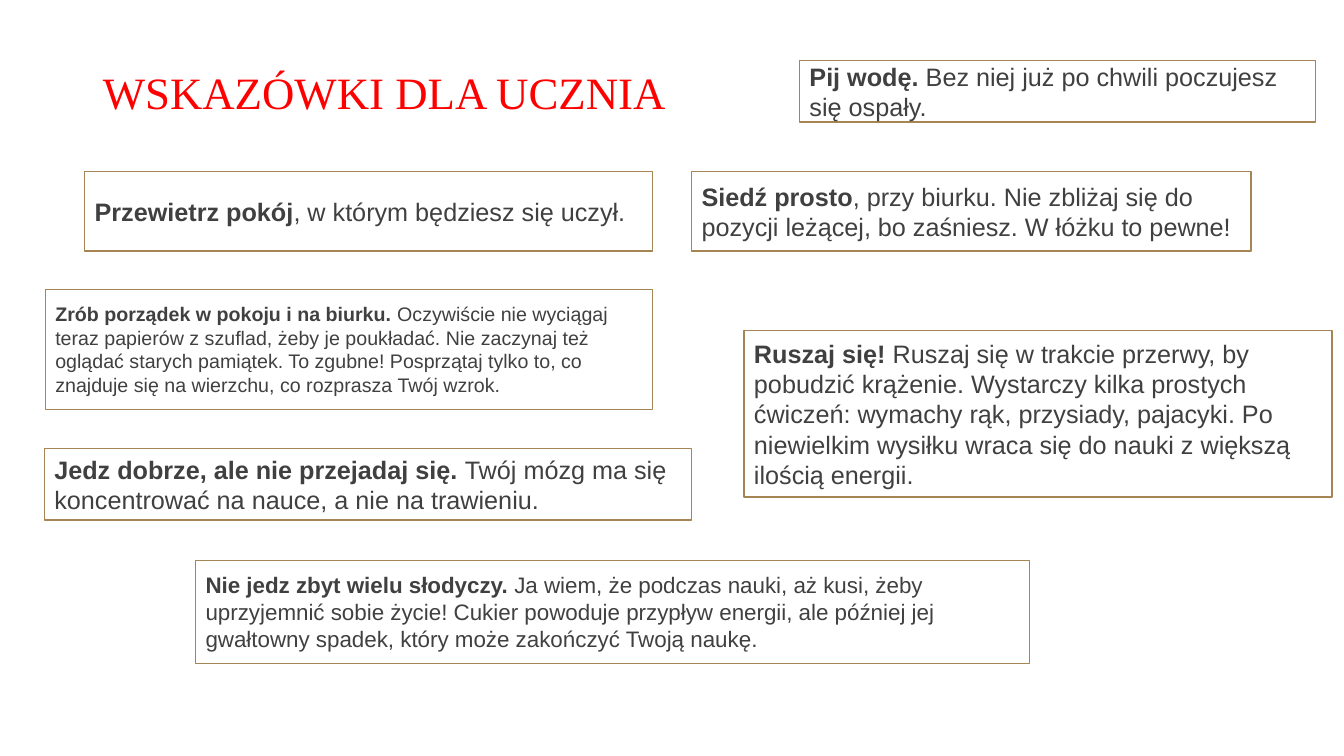
"""Builds a slide of study tips for pupils."""
from dataclasses import dataclass

import pptx
import pptx.dml.color
import pptx.enum.shapes
import pptx.enum.text
import pptx.util

Inches = pptx.util.Inches
Align = pptx.enum.text.PP_ALIGN
Anchor = pptx.enum.text.MSO_ANCHOR

HEADING = "WSKAZÓWKI DLA UCZNIA"
HEADING_PLACE = (0.92, 0.4, 10.75, 0.83)

TIPS = [
    ("Przewietrz pokój", ", w którym będziesz się uczył.",
     "large", (0.84, 1.7, 5.63, 0.79)),
    ("Zrób porządek w pokoju i na biurku. ",
     "Oczywiście nie wyciągaj teraz papierów z szuflad, żeby je poukładać. "
     "Nie zaczynaj też oglądać starych pamiątek. To zgubne! Posprzątaj tylko to, "
     "co znajduje się na wierzchu, co rozprasza Twój wzrok.",
     "small", (0.45, 2.87, 6.02, 1.19)),
    ("Jedz dobrze, ale nie przejadaj się. ",
     "Twój mózg ma się koncentrować na nauce, a nie na trawieniu.",
     "large", (0.44, 4.45, 6.42, 0.71)),
    ("Nie jedz zbyt wielu słodyczy. ",
     "Ja wiem, że podczas nauki, aż kusi, żeby uprzyjemnić sobie życie! "
     "Cukier powoduje przypływ energii, ale później jej gwałtowny spadek, "
     "który może zakończyć Twoją naukę.",
     "medium", (1.94, 5.56, 8.27, 1.02)),
    ("Pij wodę. ", "Bez niej już po chwili poczujesz się ospały.",
     "large", (7.93, 0.6, 5.12, 0.61)),
    ("Siedź prosto",
     ", przy biurku. Nie zbliżaj się do pozycji leżącej, bo zaśniesz. "
     "W łóżku to pewne!",
     "large", (6.86, 1.7, 5.55, 0.79)),
    ("Ruszaj się! ",
     "Ruszaj się w trakcie przerwy, by pobudzić krążenie. Wystarczy kilka "
     "prostych ćwiczeń: wymachy rąk, przysiady, pajacyki. Po niewielkim wysiłku "
     "wraca się do nauki z większą ilością energii.",
     "large", (7.38, 3.28, 5.83, 1.65)),
]


@dataclass(frozen=True)
class Theme:
    heading_font: str = "Times New Roman"
    body_font: str = "Arial"
    heading: str = "FF0000"
    body: str = "404040"
    border: str = "A68555"
    paper: str = "FFFFFF"
    heading_size: int = 32
    large: int = 18
    medium: int = 16
    small: int = 14


THEME = Theme()


def rgb(code):
    return pptx.dml.color.RGBColor.from_string(code)


def add_text(paragraph, text, *, size, font=THEME.body_font, color=THEME.body, bold=False):
    run = paragraph.add_run()
    run.text = text
    run.font.size = pptx.util.Pt(size)
    run.font.name = font
    run.font.bold = bold
    run.font.color.rgb = rgb(color)


def prepare_frame(frame, anchor):
    frame.word_wrap = True
    frame.auto_size = pptx.enum.text.MSO_AUTO_SIZE.NONE
    frame.vertical_anchor = anchor
    frame.paragraphs[0].alignment = Align.LEFT
    return frame.paragraphs[0]


def add_heading(slide):
    heading = slide.shapes.title
    heading.left, heading.top, heading.width, heading.height = map(Inches, HEADING_PLACE)
    paragraph = prepare_frame(heading.text_frame, Anchor.BOTTOM)
    paragraph.line_spacing = 0.9
    add_text(paragraph, HEADING, size=THEME.heading_size,
             font=THEME.heading_font, color=THEME.heading)


def add_tip(slide, advice, details, size_name, place):
    card = slide.shapes.add_shape(
        pptx.enum.shapes.MSO_SHAPE.RECTANGLE, *map(Inches, place))
    card.shadow.inherit = False
    card.fill.solid()
    card.fill.fore_color.rgb = rgb(THEME.paper)
    card.line.color.rgb = rgb(THEME.border)
    card.line.width = pptx.util.Pt(1)
    paragraph = prepare_frame(card.text_frame, Anchor.MIDDLE)
    size = getattr(THEME, size_name)
    add_text(paragraph, advice, size=size, bold=True)
    add_text(paragraph, details, size=size)


def main():
    deck = pptx.Presentation()
    deck.slide_width, deck.slide_height = Inches(13.33), Inches(7.5)
    slide = deck.slides.add_slide(deck.slide_layouts.get_by_name("Title Only"))
    slide.background.fill.solid()
    slide.background.fill.fore_color.rgb = rgb(THEME.paper)
    add_heading(slide)
    for tip in TIPS:
        add_tip(slide, *tip)
    deck.save("out.pptx")


if __name__ == "__main__":
    main()
